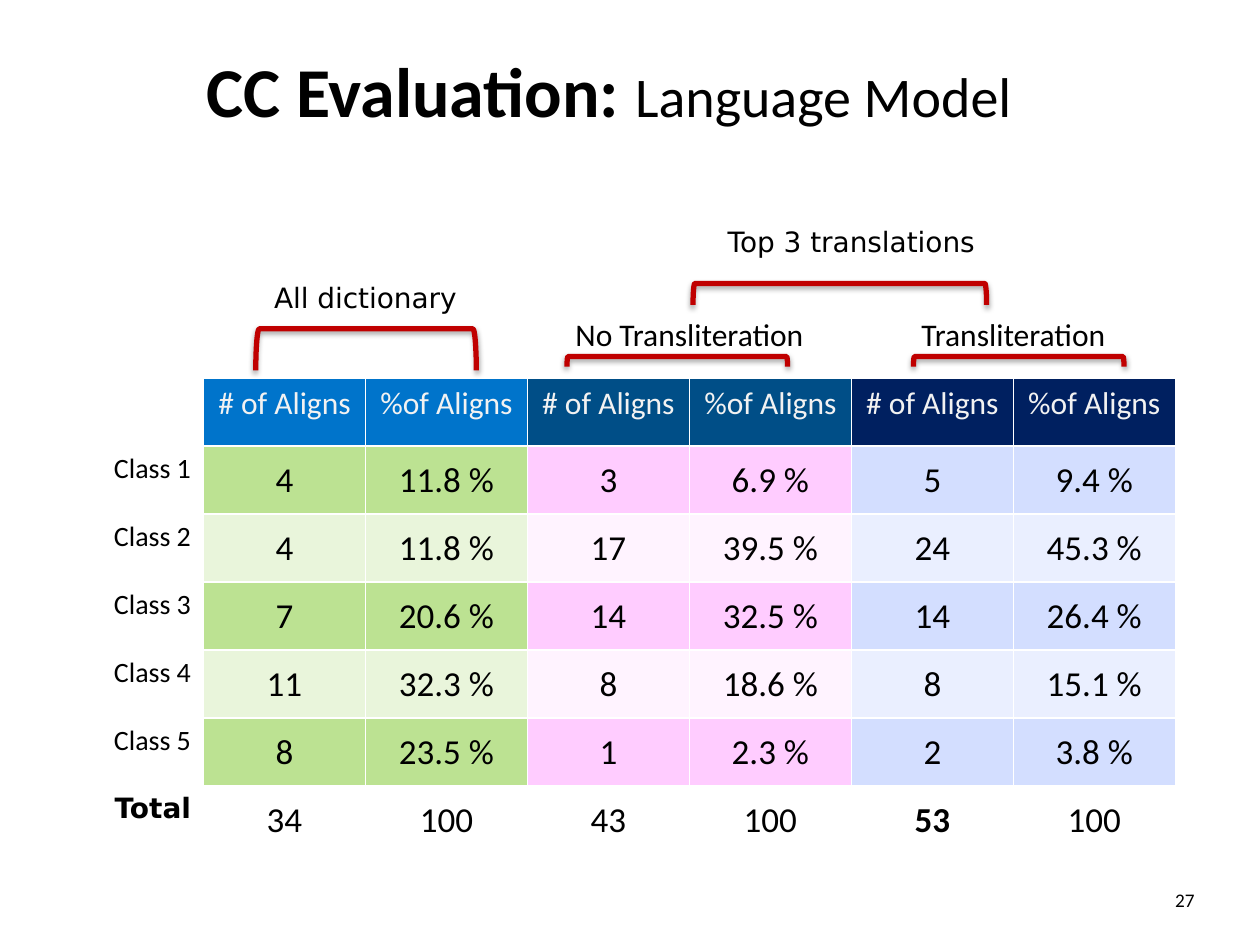
import pptx
import pptx.util
import pptx.dml.color
import pptx.enum.shapes
import pptx.enum.text
import pptx.oxml
import pptx.oxml.ns

Inches, Pt = pptx.util.Inches, pptx.util.Pt
RGB = pptx.dml.color.RGBColor.from_string
ALIGN = pptx.enum.text.PP_ALIGN
ANCHOR = pptx.enum.text.MSO_ANCHOR

COLORS = {"text": "000000", "paper": "FFFFFF", "head_text": "F2F2F2", "bracket": "C00000"}
GROUPS = [
    {"head": "0074CB", "bands": ("BCE292", "E9F5DB")},
    {"head": "004E87", "bands": ("FFCCFF", "FFF3FF")},
    {"head": "002060", "bands": ("D3DEFF", "EAEFFF")},
]
BODY, LABEL = "Calibri", "DejaVu Sans"

TITLE = [("CC Evaluation: ", 40, True), ("Language Model", 32, False)]
PAGE = "27"
# row, column, row span, column span, text, size, font
SPANS = [
    (0, 1, 2, 2, "All dictionary", 16, LABEL),
    (0, 3, 1, 4, "Top 3 translations", 16, LABEL),
    (1, 3, 1, 2, "No Transliteration", 18, BODY),
    (1, 5, 1, 2, "Transliteration", 18, BODY),
]
HEADS = ["# of Aligns", "%of Aligns"]
ROWS = [
    ("Class 1", "4", "11.8 %", "3", "6.9 %", "5", "9.4 %"),
    ("Class 2", "4", "11.8 %", "17", "39.5 %", "24", "45.3 %"),
    ("Class 3", "7", "20.6 %", "14", "32.5 %", "14", "26.4 %"),
    ("Class 4", "11", "32.3 %", "8", "18.6 %", "8", "15.1 %"),
    ("Class 5", "8", "23.5 %", "1", "2.3 %", "2", "3.8 %"),
    ("Total", "34", "100", "43", "100", "53", "100"),
]
BRACKETS = [
    (4.5, 2.83, 1.75, 0.08),
    (7.25, 2.83, 1.67, 0.08),
    (5.5, 2.25, 2.33, 0.17),
    (2.03, 2.61, 1.75, 0.33),
]
HEAD_ROWS, COLS = 3, 7
TABLE = (0.33, 1.75, 9, 5.04)
TOP_ROW, ROW = 0.71, 0.54


def style(r, size, font=BODY, color="text", bold=False):
    r.font.size, r.font.name, r.font.bold = Pt(size), font, bold
    r.font.color.rgb = RGB(COLORS[color])


def write(tf, text, size, align=ALIGN.CENTER, **look):
    p = tf.paragraphs[0]
    p.text = text
    p.alignment = align
    style(p.runs[0], size, **look)


def paint(cell, fill):
    tcPr = cell._tc.get_or_add_tcPr()
    for side in ("lnL", "lnR", "lnT", "lnB"):
        tcPr.append(pptx.oxml.parse_xml(
            f'<a:{side} {pptx.oxml.ns.nsdecls("a")} w="{Pt(1)}"><a:solidFill>'
            f'<a:srgbClr val="{COLORS["paper"]}"/></a:solidFill></a:{side}>'))
    cell.fill.solid()
    cell.fill.fore_color.rgb = RGB(fill)


def cell_fill(row, col):
    if col == 0 or row < HEAD_ROWS - 1 or row == HEAD_ROWS + len(ROWS) - 1:
        return COLORS["paper"]
    group = GROUPS[(col - 1) // 2]
    return group["head"] if row < HEAD_ROWS else group["bands"][(row - HEAD_ROWS) % 2]


def add_title(s):
    sp = s.shapes.title
    sp.left, sp.top, sp.width, sp.height = map(Inches, (0.75, 0.33, 8.17, 0.77))
    tf = sp.text_frame
    tf.vertical_anchor = ANCHOR.TOP
    p = tf.paragraphs[0]
    p.alignment = ALIGN.CENTER
    for text, size, bold in TITLE:
        r = p.add_run()
        r.text = text
        style(r, size, bold=bold)


def add_results(s):
    table = s.shapes.add_table(HEAD_ROWS + len(ROWS), COLS, *map(Inches, TABLE)).table
    table.first_row = table.horz_banding = False
    for col in table.columns:
        col.width = Inches(TABLE[2] / COLS)
    for i, row in enumerate(table.rows):
        row.height = Inches(ROW if i else TOP_ROW)
        for j in range(COLS):
            paint(table.cell(i, j), cell_fill(i, j))

    for i, j, down, across, text, size, font in SPANS:
        cell = table.cell(i, j)
        cell.merge(table.cell(i + down - 1, j + across - 1))
        write(cell.text_frame, text, size, font=font)
        if down > 1:
            cell.vertical_anchor = ANCHOR.MIDDLE
    for j in range(1, COLS):
        write(table.cell(HEAD_ROWS - 1, j).text_frame, HEADS[(j - 1) % 2], 18,
              color="head_text")
    for i, (label, *values) in enumerate(ROWS, HEAD_ROWS):
        total = label == "Total"
        write(table.cell(i, 0).text_frame, label, 16, ALIGN.RIGHT,
              font=LABEL if total else BODY, bold=total)
        for j, value in enumerate(values, 1):
            cell = table.cell(i, j)
            cell.vertical_anchor = ANCHOR.MIDDLE
            cell.margin_left = cell.margin_right = cell.margin_top = Inches(0.01)
            cell.margin_bottom = 0
            write(cell.text_frame, value, 20, bold=total and value == "53")


def add_bracket(s, left, top, width, depth):
    shift = (width - depth) / 2
    sp = s.shapes.add_shape(pptx.enum.shapes.MSO_SHAPE.LEFT_BRACKET,
                            *map(Inches, (left + shift, top - shift, depth, width)))
    sp.rotation = 90
    sp.fill.background()
    sp.line.color.rgb = RGB(COLORS["bracket"])
    sp.line.width = Pt(3)
    sp.shadow.inherit = False
    effects = sp._element.spPr.find(pptx.oxml.ns.qn("a:effectLst"))
    effects.append(pptx.oxml.parse_xml(
        f'<a:outerShdw {pptx.oxml.ns.nsdecls("a")} blurRad="{Pt(3.1)}" dist="{Pt(1.8)}" '
        f'dir="5400000" rotWithShape="0"><a:srgbClr val="{COLORS["text"]}">'
        '<a:alpha val="35000"/></a:srgbClr></a:outerShdw>'))


def main():
    prs = pptx.Presentation()
    prs.slide_width, prs.slide_height = Inches(10), Inches(7.5)
    s = prs.slides.add_slide(prs.slide_layouts[5])
    add_results(s)
    page = s.shapes.add_textbox(*map(Inches, (8.58, 7, 1, 0.33)))
    page.text_frame.word_wrap = True
    write(page.text_frame, PAGE, 11, ALIGN.RIGHT)
    add_title(s)
    for bracket in BRACKETS:
        add_bracket(s, *bracket)
    prs.save("out.pptx")


if __name__ == "__main__":
    main()
